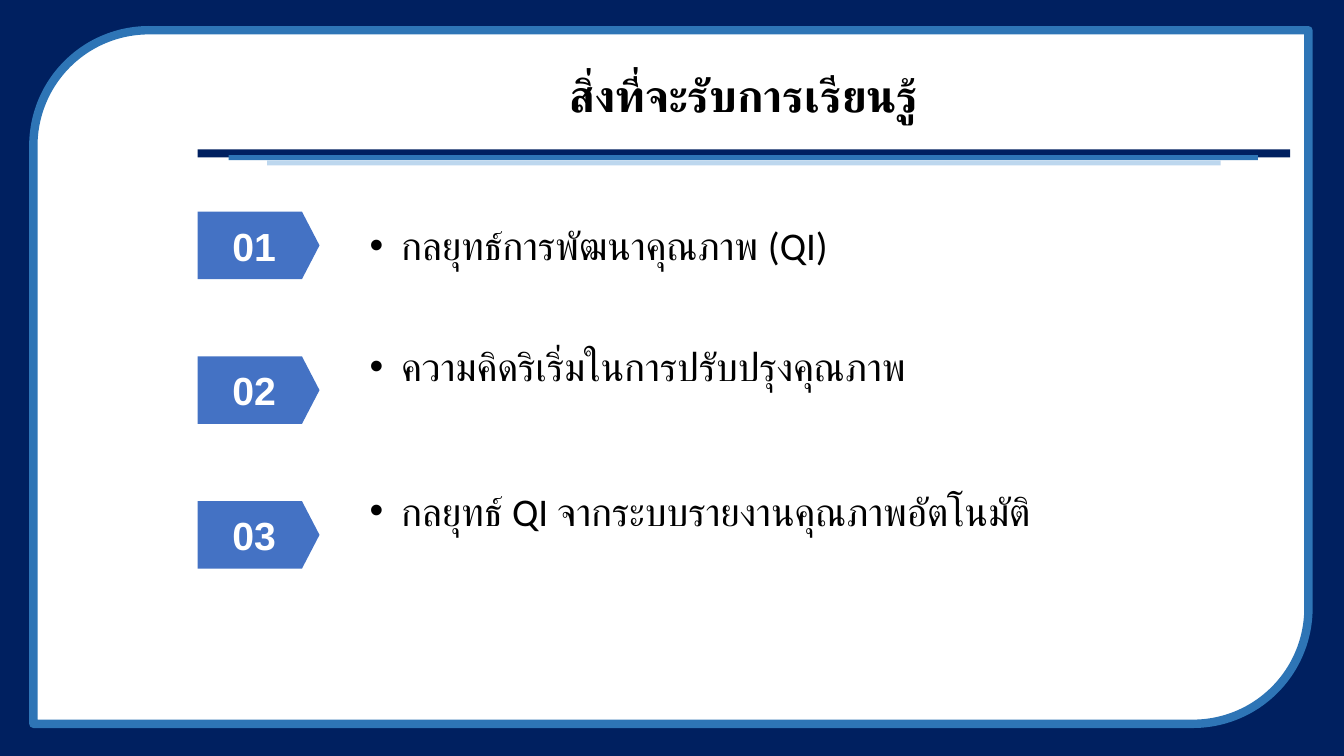
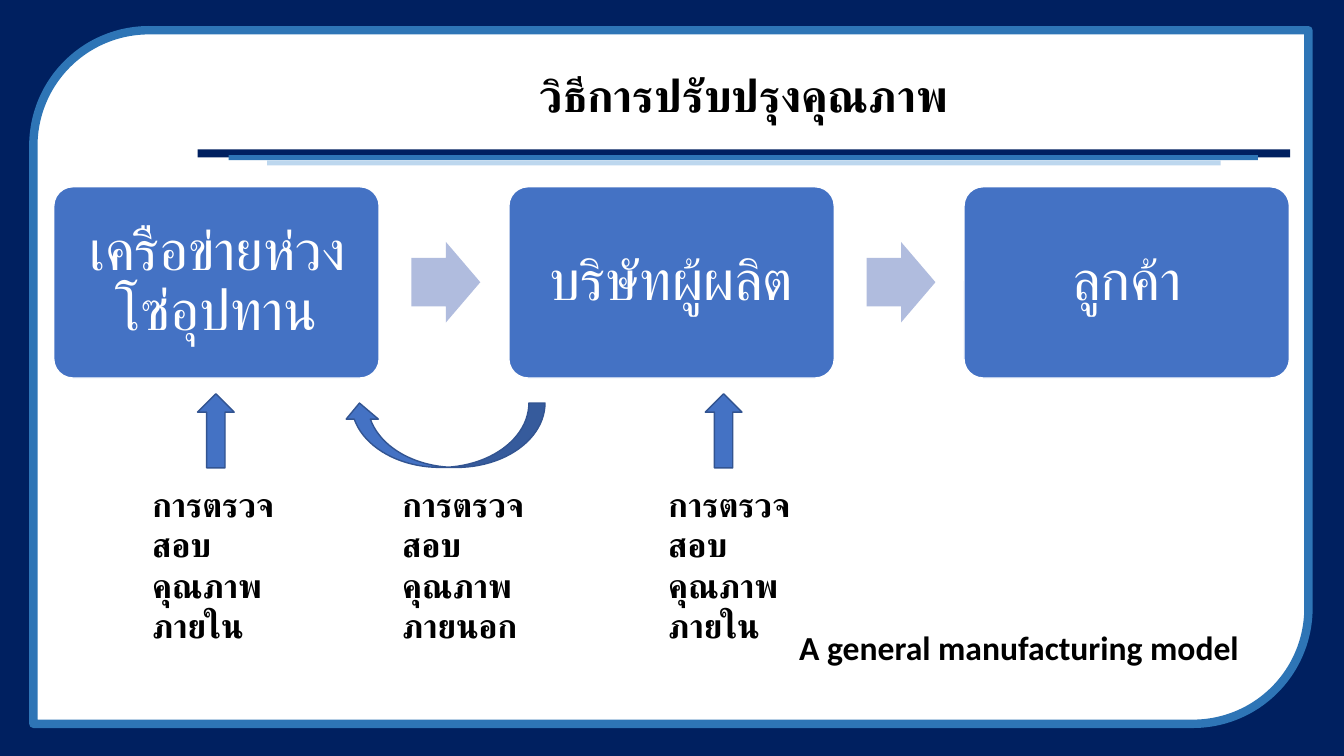
from lxml.etree import SubElement
from pptx import Presentation
from pptx.dml.color import RGBColor
from pptx.enum.lang import MSO_LANGUAGE_ID as Language
from pptx.enum.shapes import MSO_SHAPE as Preset
from pptx.enum.text import MSO_ANCHOR as Anchor, MSO_AUTO_SIZE as AutoSize, PP_ALIGN as Align
from pptx.oxml.ns import qn
from pptx.util import Pt

# Content
OBJECTIVES_TITLE = "สิ่งที่จะรับการเรียนรู้"
OBJECTIVES = [  # number, text, top of text
    ("01", "กลยุทธ์การพัฒนาคุณภาพ (QI)", 154.8),
    ("02", "ความคิดริเริ่มในการปรับปรุงคุณภาพ", 241.2),
    ("03", "กลยุทธ์ QI จากระบบรายงานคุณภาพอัตโนมัติ", 344.2),
]
MODEL_TITLE = "วิธีการปรับปรุงคุณภาพ"
STAGES = ["เครือข่ายห่วงโซ่อุปทาน", "บริษัทผู้ผลิต", "ลูกค้า"]
CHECKS = [  # lines, left, width
    (["การตรวจสอบ", "คุณภาพภายใน"], 101.5, 123.1),
    (["การตรวจสอบ", "คุณภาพภายนอก"], 280.1, 137.5),
    (["การตรวจสอบ", "คุณภาพภายใน"], 470.2, 123.1),
]
CAPTION = "A general manufacturing model"

# Shared look
NAVY, BLUE, PALE = "002060", "2E75B6", "BDD7EE"
ACCENT, ACCENT_EDGE, FLOW = "4472C4", "325491", "B0BCDE"
WHITE, BLACK = "FFFFFF", "000000"
WIDTH, HEIGHT = 960, 540
RULES = [  # box, colour
    ((141.1, 106.6, 780.5, 5.8), NAVY),
    ((163.4, 110.9, 735.1, 3.6), BLUE),
    ((190.8, 114.5, 681.1, 3.6), PALE),
]
TITLE_BOX = (141.1, 35.3, 780.5, 69.8)
TITLE_FONT = {"name": "Arial", "size": Pt(32), "bold": True}
BADGE_FONT = {"name": "Arial", "size": Pt(28), "bold": True}
ITEM_FONT = {"name": "Calibri", "size": Pt(28), "bold": False}
STAGE_FONT = {"name": "Calibri", "size": Pt(40), "bold": False}
LABEL_FONT = {"name": "Calibri", "size": Pt(24), "bold": True}


def color(hex_text):
    return RGBColor.from_string(hex_text)


def place(shape, box):
    for name, value in zip(("left", "top", "width", "height"), box):
        setattr(shape, name, Pt(value))


def write(shape, lines, font, ink=BLACK, language=Language.THAI, **paragraph_format):
    """Fill a shape with one paragraph per line and return its text frame."""
    frame = shape.text_frame
    frame.auto_size = AutoSize.NONE
    frame.word_wrap = True
    for index, line in enumerate(lines):
        paragraph = frame.add_paragraph() if index else frame.paragraphs[0]
        for name, value in paragraph_format.items():
            setattr(paragraph, name, value)
        run = paragraph.add_run()
        run.text = line
        for name, value in font.items():
            setattr(run.font, name, value)
        run.font.color.rgb = color(ink)
        run.font.language_id = language
    return frame


def add_shape(slide, preset, box, fill, line=None, line_width=1, adjustments=()):
    shape = slide.shapes.add_shape(preset, *map(Pt, box))
    shape.shadow.inherit = False
    shape.fill.solid()
    shape.fill.fore_color.rgb = color(fill)
    if line:
        shape.line.color.rgb = color(line)
        shape.line.width = Pt(line_width)
    else:
        shape.line.fill.background()
    for index, value in enumerate(adjustments):
        shape.adjustments[index] = value
    return shape


def add_text(slide, box, lines, font, **options):
    return write(slide.shapes.add_textbox(*map(Pt, box)), lines, font, **options)


def add_bullet(paragraph, indent):
    properties = paragraph._p.get_or_add_pPr()
    properties.set("marL", str(Pt(indent)))
    properties.set("indent", str(-Pt(indent)))
    SubElement(properties, qn("a:buFont")).set("typeface", "Arial")
    SubElement(properties, qn("a:buChar")).set("char", "•")


def decorate_layout(layout, slide):
    """Draw the frame and title rules, then move them behind the layout's placeholders."""
    parts = [
        add_shape(slide, Preset.RECTANGLE, (0, 0, WIDTH, HEIGHT), NAVY),
        add_shape(slide, Preset.ROUND_2_DIAG_RECTANGLE, (23.8, 21.6, 910.8, 495.4),
                  WHITE, BLUE, 6),
    ]
    parts += [add_shape(slide, Preset.RECTANGLE, box, fill) for box, fill in RULES]
    for position, part in enumerate(parts, start=2):
        layout.shapes.element.insert(position, part.element)


def add_titled_slide(presentation, layout, title):
    slide = presentation.slides.add_slide(layout)
    place(slide.shapes.title, TITLE_BOX)
    frame = write(slide.shapes.title, [title], TITLE_FONT,
                  alignment=Align.CENTER, line_spacing=0.9)
    frame.vertical_anchor = Anchor.MIDDLE
    return slide


def fill_objectives(slide):
    for index, (number, text, top) in enumerate(OBJECTIVES):
        badge = add_shape(slide, Preset.PENTAGON, (141.1, 151.2 + index * 103.4, 87.1, 48.2),
                          ACCENT, adjustments=[0.26])
        frame = write(badge, [number], BADGE_FONT, WHITE, Language.ENGLISH_US,
                      alignment=Align.CENTER)
        frame.vertical_anchor = Anchor.MIDDLE
        frame = add_text(slide, (257, top, 643.7, 41), [text], ITEM_FONT)
        add_bullet(frame.paragraphs[0], 22.5)


def fill_model(slide):
    # Stages, with an arrow between neighbours
    for index, stage in enumerate(STAGES):
        left = 38.4 + index * 325.1
        card = add_shape(slide, Preset.ROUNDED_RECTANGLE, (left, 133.4, 232.4, 136.6),
                         ACCENT, WHITE, adjustments=[0.1])
        frame = write(card, [stage], STAGE_FONT, WHITE,
                      alignment=Align.CENTER, line_spacing=0.9)
        frame.vertical_anchor = Anchor.MIDDLE
        for side in ("left", "top", "right", "bottom"):
            setattr(frame, f"margin_{side}", Pt(12))
        if index < len(STAGES) - 1:
            add_shape(slide, Preset.RIGHT_ARROW, (left + 255.5, 172.8, 49.2, 57.6),
                      FLOW, adjustments=[0.6, 0.5])

    # Quality checks
    for lines, left, width in CHECKS:
        add_text(slide, (left, 342, width, 65.5), lines, LABEL_FONT)
    for left in (141.1, 503.8):
        add_shape(slide, Preset.UP_ARROW, (left, 281.3, 26.2, 52.9), ACCENT, ACCENT_EDGE)
    feedback = add_shape(slide, Preset.CURVED_UP_ARROW, (245.3, 287.9, 144, 46),
                         ACCENT, ACCENT_EDGE)
    feedback.element.spPr.find(qn("a:xfrm")).set("flipH", "1")

    caption = add_text(slide, (563.8, 444.2, 331.9, 36), [CAPTION], LABEL_FONT,
                       language=Language.ENGLISH_US)
    caption.word_wrap = False


def main():
    presentation = Presentation()
    presentation.slide_width, presentation.slide_height = Pt(WIDTH), Pt(HEIGHT)
    layout = presentation.slide_layouts.get_by_name("Title Only")
    objectives = add_titled_slide(presentation, layout, OBJECTIVES_TITLE)
    decorate_layout(layout, objectives)
    fill_objectives(objectives)
    fill_model(add_titled_slide(presentation, layout, MODEL_TITLE))
    presentation.save("out.pptx")


if __name__ == "__main__":
    main()
